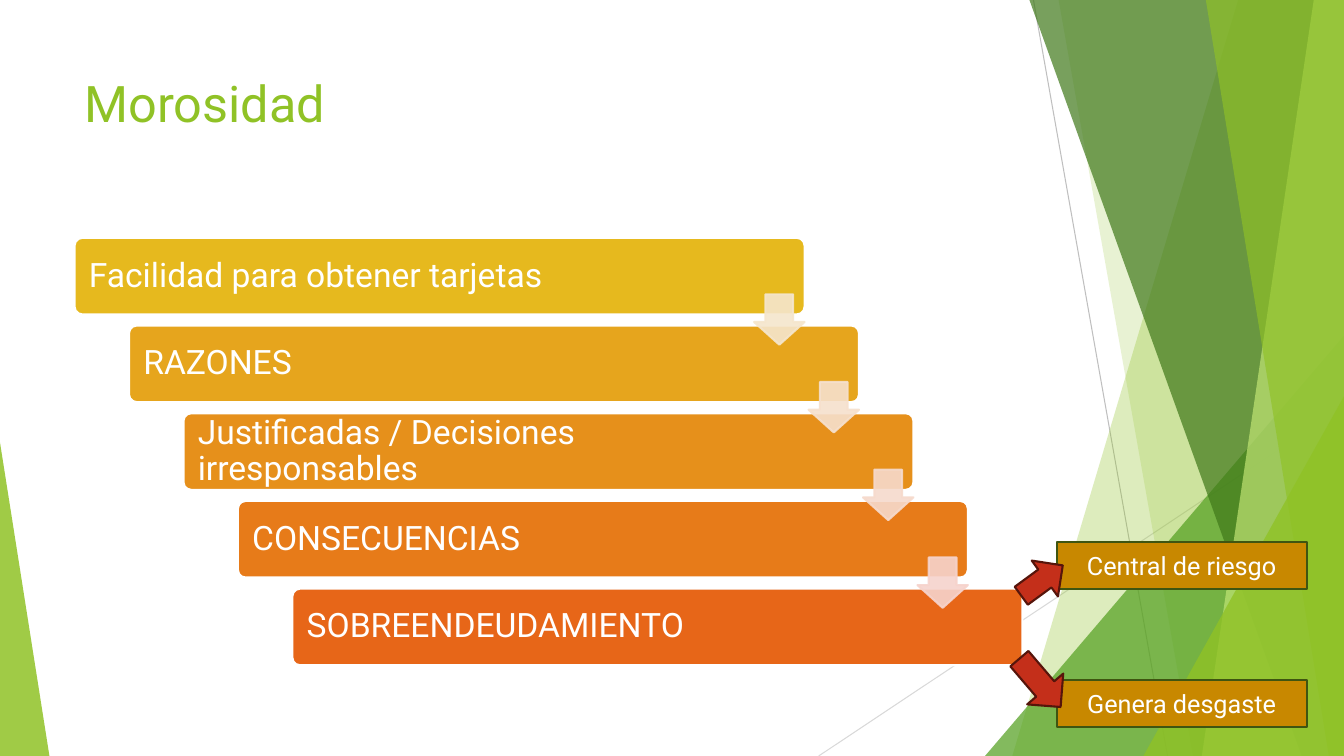
from pptx import Presentation
from pptx.util import Inches, Pt
from pptx.dml.color import RGBColor
from pptx.enum.shapes import MSO_SHAPE as Shape, MSO_CONNECTOR as Conn
from pptx.enum.text import PP_ALIGN as Align, MSO_ANCHOR as Anchor
from pptx.oxml.ns import qn
from lxml.etree import SubElement

FONT = "Roboto"
GREEN = "90C226"


def paint(fill, color, alpha=100):
    fill.solid()
    fill.fore_color.rgb = RGBColor.from_string(color)
    if alpha < 100:
        tint = fill._xPr.find(qn("a:solidFill"))[0]
        SubElement(tint, qn("a:alpha")).set("val", str(alpha * 1000))


def style(shape, color, alpha=100, edge=None):
    shape.shadow.inherit = False
    paint(shape.fill, color, alpha)
    if edge:
        paint(shape.line.fill, edge, alpha)
        shape.line.width = Pt(1.5)
    else:
        shape.line.fill.background()


def write(shape, text, size, color, align, anchor):
    frame = shape.text_frame
    frame.word_wrap = True
    frame.vertical_anchor = anchor
    frame.text = text
    par = frame.paragraphs[0]
    par.alignment = align
    font = par.runs[0].font
    font.name = FONT
    font.size = Pt(size)
    font.color.rgb = RGBColor.from_string(color)
    return par


def add_line(slide, start, end, color):
    line = slide.shapes.add_connector(Conn.STRAIGHT, *map(Inches, start + end))
    paint(line.line.fill, color)
    line.line.width = Pt(0.75)
    SubElement(line._element.spPr, qn("a:effectLst"))


def add_band(slide, top, foot, color, alpha):
    right, low = 13.33, 7.5
    pen = slide.shapes.build_freeform(Inches(top), 0)
    pen.add_line_segments([(Inches(x), Inches(y)) for x, y in
                           ((right, 0), (right, low), (foot, low))])
    style(pen.convert_to_shape(), color, alpha)


def add_form(slide, kind, box, color, alpha=100, edge=None, adjust=()):
    shape = slide.shapes.add_shape(kind, *map(Inches, box))
    for i, value in enumerate(adjust):
        shape.adjustments[i] = value
    style(shape, color, alpha, edge)
    return shape


def add_peak(slide, box, tip, color, alpha):
    add_form(slide, Shape.ISOSCELES_TRIANGLE, box, color, alpha, adjust=[tip])


def add_decor(slide):
    add_line(slide, (10.25, 0), (11.58, 7.5), "BFBFBF")
    add_line(slide, (13.33, 4.03), (8.12, 7.5), "D9D9D9")
    add_band(slide, 12.28, 10.04, GREEN, 30)
    add_band(slide, 10.5, 11.83, GREEN, 20)
    add_peak(slide, (9.77, 3.33, 3.56, 4.17), 1, "54A021", 72)
    add_band(slide, 10.21, 12.91, "3F7819", 70)
    add_band(slide, 13.03, 11.92, "C0E474", 70)
    add_band(slide, 11.96, 13.18, GREEN, 65)
    add_peak(slide, (11.34, 3.93, 1.99, 3.57), 1, GREEN, 80)
    add_peak(slide, (0, 4.39, 0.49, 3.11), 0, GREEN, 85)


def add_title(slide, text):
    title = slide.shapes.title
    title.left, title.top, title.width, title.height = map(
        Inches, (0.74, 0.67, 9.4, 1.44))
    write(title, text, 36, GREEN, Align.LEFT, Anchor.TOP)


def add_step(slide, i, text, color):
    box = (0.74 + 0.54 * i, 2.36 + 0.87 * i, 7.24, 0.76)
    bar = add_form(slide, Shape.ROUNDED_RECTANGLE, box, color,
                   edge="FFFFFF", adjust=[0.1])
    par = write(bar, text, 24, "FFFFFF", Align.LEFT, Anchor.MIDDLE)
    par.line_spacing = 0.9
    frame = bar.text_frame
    frame.margin_left, frame.margin_right = Inches(0.12), Inches(1.16)


def add_drop(slide, i, color):
    box = (7.48 + 0.54 * i, 2.92 + 0.87 * i, 0.5, 0.5)
    add_form(slide, Shape.DOWN_ARROW, box, color, 90, color, [0.55, 0.45])


def add_label(slide, top, text):
    label = add_form(slide, Shape.RECTANGLE, (10.48, top, 2.48, 0.46),
                     "C88800", edge="3F5511")
    write(label, text, 18, "FFFFFF", Align.CENTER, Anchor.MIDDLE)


def add_arrow(slide, box, angle):
    arrow = add_form(slide, Shape.RIGHT_ARROW, box, "C42F1A", edge="56150B")
    arrow.rotation = angle


def main():
    deck = Presentation()
    deck.slide_width, deck.slide_height = Inches(13.33), Inches(7.5)
    slide = deck.slides.add_slide(deck.slide_layouts[5])
    add_decor(slide)
    add_title(slide, "Morosidad")
    steps = [
        ("Facilidad para obtener tarjetas", "E6B91E"),
        ("RAZONES", "E6A51D"),
        ("Justificadas / Decisiones irresponsables", "E6901B"),
        ("CONSECUENCIAS", "E77B19"),
        ("SOBREENDEUDAMIENTO", "E76618"),
    ]
    for i, (text, color) in enumerate(steps):
        add_step(slide, i, text, color)
    for i, color in enumerate(["F5E6CD", "F6E0CD", "F6DACC", "F6D3CC"]):
        add_drop(slide, i, color)
    add_label(slide, 5.38, "Central de riesgo")
    add_label(slide, 6.75, "Genera desgaste")
    add_arrow(slide, (10.08, 5.54, 0.51, 0.44), 323.8)
    add_arrow(slide, (10, 6.54, 0.63, 0.47), 49.5)
    deck.save("out.pptx")


if __name__ == "__main__":
    main()
